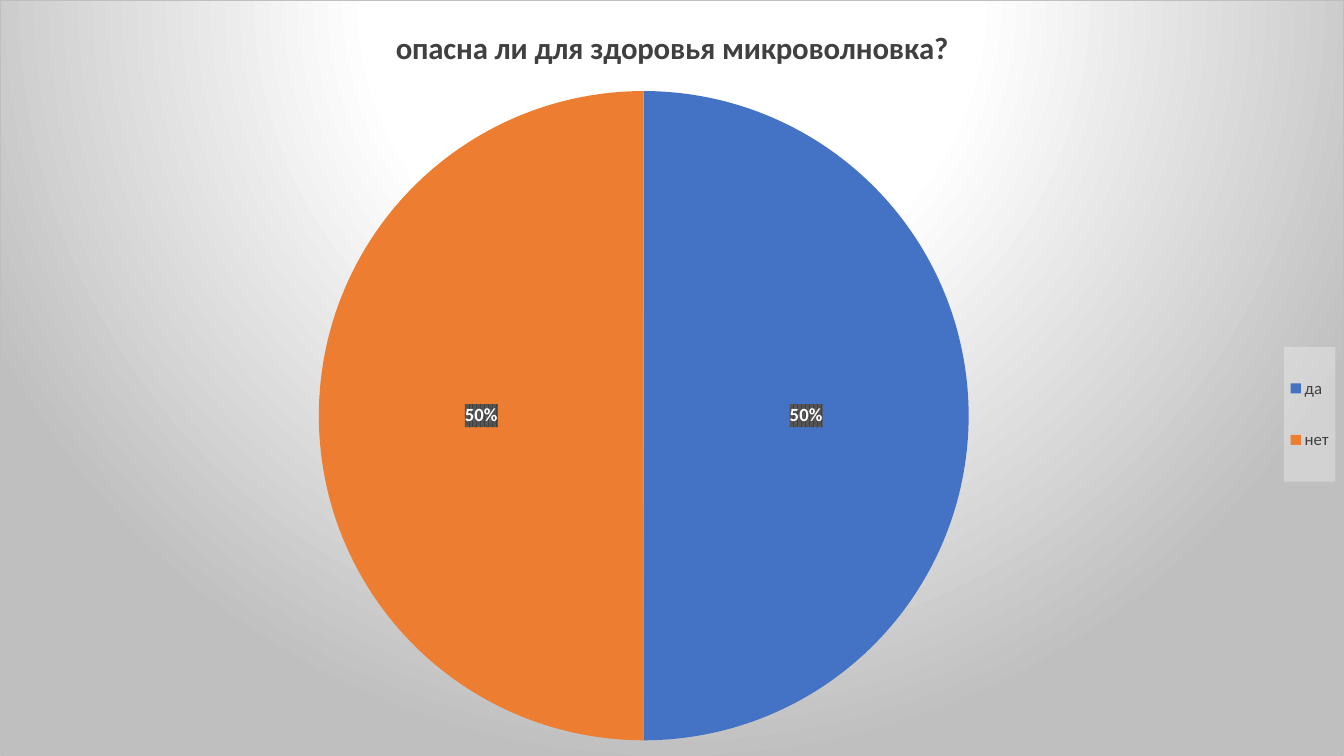
"""Build a slide with a full-size pie chart of a yes/no survey answer."""
from lxml.etree import SubElement, fromstring
from pptx import Presentation
from pptx.chart.data import CategoryChartData
from pptx.dml.color import RGBColor
from pptx.enum.chart import XL_CHART_TYPE, XL_LABEL_POSITION, XL_LEGEND_POSITION
from pptx.oxml.ns import qn
from pptx.util import Inches, Pt

QUESTION = "опасна ли для здоровья микроволновка?"
ANSWERS = [("да", 50, "yes"), ("нет", 50, "no")]
COLORS = {
    "yes": "4472C4", "no": "ED7D31",
    "base": "000000", "text": "404040", "label": "FFFFFF",
    "center": "FFFFFF", "edge": "BFBFBF", "legend": "F2F2F2",
    "pattern": "404040", "pattern_back": "595959",
}
FONT = "Calibri"
NAMESPACES = (
    'xmlns:c="http://schemas.openxmlformats.org/drawingml/2006/chart" '
    'xmlns:a="http://schemas.openxmlformats.org/drawingml/2006/main"'
)

SLIDE_WIDTH, SLIDE_HEIGHT = 13.33, 7.5
PIE_SIZE = 0.86 * SLIDE_HEIGHT
PIE_AREA = (3.16, 0.12 * SLIDE_HEIGHT, PIE_SIZE, PIE_SIZE)
LEGEND_AREA = (12.74, 3.44, 0.51, 1.34)
GRADIENT_STOPS = [(0, "center"), (39, "center"), (100, "edge")]


def rgb(name):
    return RGBColor.from_string(COLORS[name])


def color_xml(name, opacity=100):
    return f'<a:srgbClr val="{COLORS[name]}"><a:alpha val="{opacity * 1000}"/></a:srgbClr>'


def style_font(font, size, color, bold=False):
    font.name = FONT
    font.size = Pt(size)
    font.bold = bold
    font.color.rgb = rgb(color)


def find_part(chart, tag):
    return chart.element.find(f".//{qn(tag)}")


def add_shape_properties(part, *properties):
    shape_properties = fromstring(f"<c:spPr {NAMESPACES}>{''.join(properties)}</c:spPr>")
    part.find(qn("c:txPr")).addprevious(shape_properties)


def set_layout(part, position, area, target=None):
    for automatic_layout in part.findall(qn("c:layout")):
        part.remove(automatic_layout)
    left, top, width, height = area
    settings = [("layoutTarget", target)] if target else []
    settings += [
        ("xMode", "edge"), ("yMode", "edge"),
        ("x", left / SLIDE_WIDTH), ("y", top / SLIDE_HEIGHT),
        ("w", width / SLIDE_WIDTH), ("h", height / SLIDE_HEIGHT),
    ]
    layout = fromstring(f"<c:layout {NAMESPACES}/>")
    manual_layout = SubElement(layout, qn("c:manualLayout"))
    for name, value in settings:
        SubElement(manual_layout, qn(f"c:{name}")).set("val", str(value))
    part.insert(position, layout)


def add_pie(slide):
    data = CategoryChartData()
    data.categories = [answer for answer, _, _ in ANSWERS]
    data.add_series(QUESTION, [percent for _, percent, _ in ANSWERS])
    chart = slide.shapes.add_chart(
        XL_CHART_TYPE.PIE, 0, 0, Inches(SLIDE_WIDTH), Inches(SLIDE_HEIGHT), data
    ).chart
    style_font(chart.font, 10, "base")
    set_layout(find_part(chart, "c:plotArea"), 0, PIE_AREA, target="inner")
    return chart


def style_background(chart):
    stops = "".join(
        f'<a:gs pos="{percent * 1000}">{color_xml(color)}</a:gs>'
        for percent, color in GRADIENT_STOPS
    )
    gradient = (
        f'<a:gradFill><a:gsLst>{stops}</a:gsLst><a:path path="circle">'
        '<a:fillToRect l="50000" t="-80000" r="50000" b="180000"/></a:path></a:gradFill>'
    )
    border = f'<a:ln w="{Pt(0.75)}"><a:solidFill>{color_xml("edge")}</a:solidFill></a:ln>'
    add_shape_properties(chart.element, gradient, border)


def style_title(chart):
    run = chart.chart_title.text_frame.paragraphs[0].add_run()
    run.text = QUESTION
    style_font(run.font, 22, "text", bold=True)


def style_slices(chart):
    plot = chart.plots[0]
    plot.vary_by_categories = True
    for index, (_, _, color) in enumerate(ANSWERS):
        slice_format = plot.series[0].points[index].format
        slice_format.fill.solid()
        slice_format.fill.fore_color.rgb = rgb(color)
        slice_format.line.fill.background()


def style_labels(chart):
    labels = chart.plots[0].series[0].data_labels
    labels.show_percentage = True
    labels.show_value = False
    labels.number_format = "0%"
    labels.number_format_is_linked = False
    labels.position = XL_LABEL_POSITION.CENTER
    style_font(labels.font, 13.3, "label", bold=True)
    pattern = (
        f'<a:pattFill prst="pct75"><a:fgClr>{color_xml("pattern")}</a:fgClr>'
        f'<a:bgClr>{color_xml("pattern_back")}</a:bgClr></a:pattFill>'
    )
    add_shape_properties(find_part(chart, "c:dLbls"), pattern)


def style_legend(chart):
    chart.has_legend = True
    chart.legend.position = XL_LEGEND_POSITION.RIGHT
    chart.legend.include_in_layout = False
    style_font(chart.legend.font, 12, "text")
    legend = find_part(chart, "c:legend")
    add_shape_properties(legend, f'<a:solidFill>{color_xml("legend", 39)}</a:solidFill>')
    set_layout(legend, 1, LEGEND_AREA)


def main():
    presentation = Presentation()
    presentation.slide_width = Inches(SLIDE_WIDTH)
    presentation.slide_height = Inches(SLIDE_HEIGHT)
    slide = presentation.slides.add_slide(presentation.slide_layouts[6])
    chart = add_pie(slide)
    for style_part in (style_background, style_title, style_slices, style_labels, style_legend):
        style_part(chart)
    presentation.save("out.pptx")


if __name__ == "__main__":
    main()
